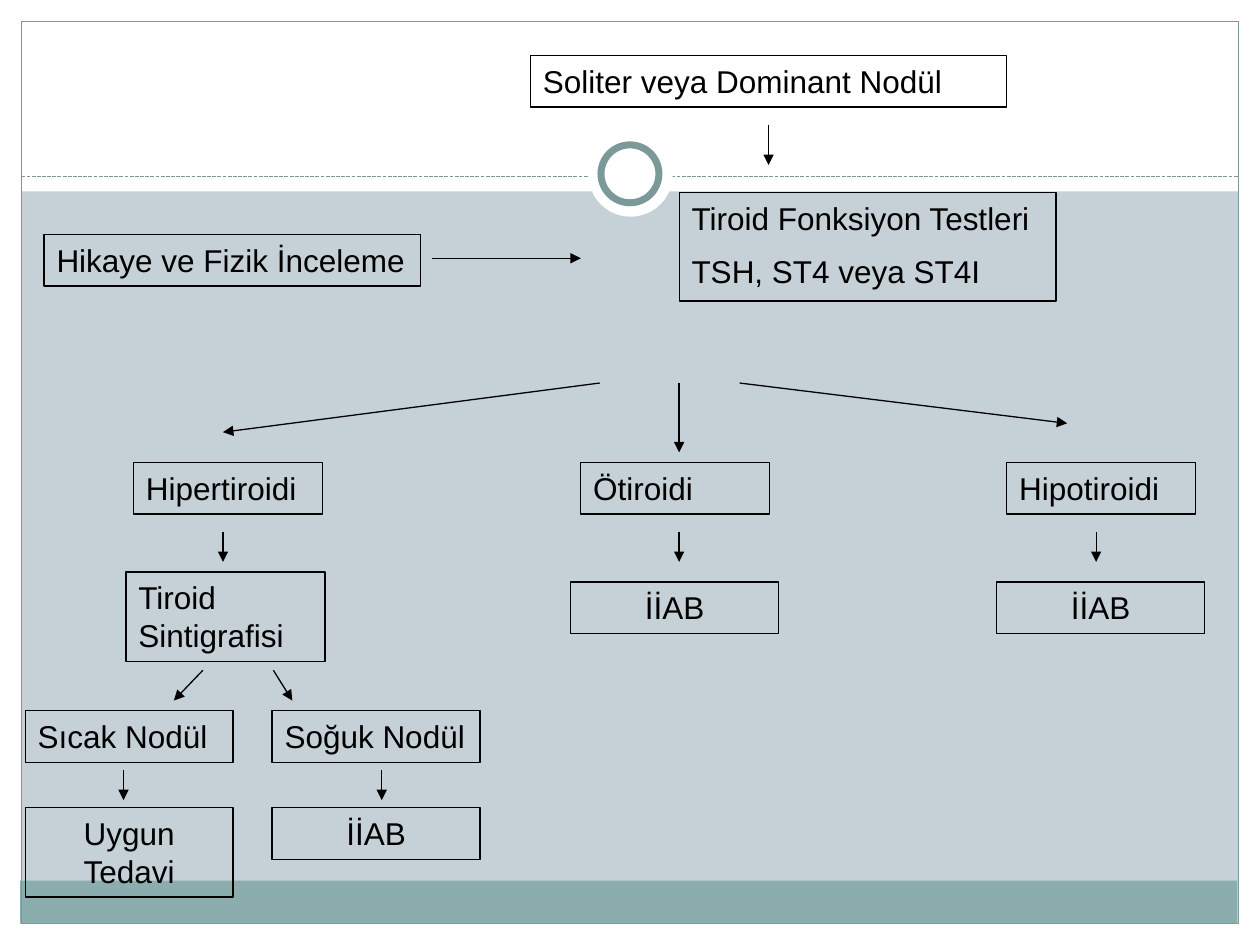
"""Build the thyroid nodule work-up flowchart slide."""
import dataclasses

import lxml.etree
import pptx
import pptx.dml.color
import pptx.enum.dml
import pptx.enum.shapes
import pptx.enum.text
import pptx.oxml.ns
import pptx.util

Inches = pptx.util.Inches
Pt = pptx.util.Pt
Shapes = pptx.enum.shapes.MSO_SHAPE
Align = pptx.enum.text.PP_ALIGN


@dataclasses.dataclass(frozen=True)
class Theme:
    """Colours, font and sizes of the slide."""
    background: str = "C5D1D7"
    paper: str = "FFFFFF"
    band: str = "8CADAE"
    frame: str = "7C999A"
    ink: str = "000000"
    font: str = "Arial"
    text_size: float = 18
    paragraph_gap: float = 9
    thin: float = 0.75
    ring: float = 4


def colour(value):
    """Return an RGB colour from its hex value."""
    return pptx.dml.color.RGBColor.from_string(value)


def write_text(text_frame, text, *, font, size, ink, gap, align):
    """Write one paragraph per line of text with the given format."""
    for index, line in enumerate(text.split("\n")):
        paragraph = text_frame.paragraphs[0] if index == 0 else text_frame.add_paragraph()
        paragraph.alignment = align
        paragraph.space_before = Pt(gap if index else 0)
        run = paragraph.add_run()
        run.text = line
        run.font.name = font
        run.font.size = Pt(size)
        run.font.color.rgb = colour(ink)


class FlowchartSlide:
    """Hold the theme and the slide, and add each kind of element."""

    def __init__(self, slide, theme):
        """Keep the slide and theme and paint the background."""
        self.slide = slide
        self.theme = theme
        slide.background.fill.solid()
        slide.background.fill.fore_color.rgb = colour(theme.background)

    def panel(self, left, top, width, height, *, kind=Shapes.RECTANGLE,
              fill=None, line=None, weight=None):
        """Add a decorative shape."""
        shape = self.slide.shapes.add_shape(
            kind, Inches(left), Inches(top), Inches(width), Inches(height))
        shape.shadow.inherit = False
        if fill:
            shape.fill.solid()
            shape.fill.fore_color.rgb = colour(fill)
        else:
            shape.fill.background()
        if line:
            shape.line.color.rgb = colour(line)
            shape.line.width = Pt(weight or self.theme.thin)
        else:
            shape.line.fill.background()
        return shape

    def box(self, text, left, top, width, height=0.41, align=Align.LEFT):
        """Add an outlined flowchart box."""
        theme = self.theme
        shape = self.panel(left, top, width, height, line=theme.ink)
        text_frame = shape.text_frame
        text_frame.word_wrap = True
        text_frame.auto_size = pptx.enum.text.MSO_AUTO_SIZE.SHAPE_TO_FIT_TEXT
        text_frame.vertical_anchor = pptx.enum.text.MSO_ANCHOR.TOP
        write_text(text_frame, text, font=theme.font, size=theme.text_size,
                   ink=theme.ink, gap=theme.paragraph_gap, align=align)

    def line(self, start, end, ink):
        """Add a thin straight line."""
        connector = self.slide.shapes.add_connector(
            pptx.enum.shapes.MSO_CONNECTOR.STRAIGHT,
            *(Inches(value) for value in (*start, *end)))
        connector.line.color.rgb = colour(ink)
        connector.line.width = Pt(self.theme.thin)
        lxml.etree.SubElement(
            connector.element.spPr, pptx.oxml.ns.qn("a:effectLst"))
        return connector

    def arrow(self, start, end):
        """Add a line with a triangular head at its end."""
        connector = self.line(start, end, self.theme.ink)
        lxml.etree.SubElement(connector.line._get_or_add_ln(),
                              pptx.oxml.ns.qn("a:tailEnd"), type="triangle")

    def frame(self):
        """Add the page margins, bands, border and ring."""
        theme = self.theme
        for margin in ((0, 7.33, 10, 0.17), (0, 0, 10, 1.52),
                       (0, 0, 0.17, 7.5), (9.83, 0, 0.17, 7.5)):
            self.panel(*margin, fill=theme.paper)
        self.panel(0.16, 6.99, 9.66, 0.34, fill=theme.band)
        self.panel(0.17, 0.17, 9.66, 7.16, line=theme.frame)
        divider = self.line((0.17, 1.4), (9.83, 1.4), theme.frame)
        divider.line.dash_style = pptx.enum.dml.MSO_LINE.SQUARE_DOT
        self.panel(4.67, 1.05, 0.67, 0.67, kind=Shapes.OVAL, fill=theme.paper)
        self.panel(4.77, 1.15, 0.46, 0.46, kind=Shapes.OVAL, fill=theme.paper,
                   line=theme.frame, weight=theme.ring)


def main():
    """Build and save the presentation."""
    presentation = pptx.Presentation()
    presentation.slide_width = Inches(10)
    presentation.slide_height = Inches(7.5)
    slide = presentation.slides.add_slide(presentation.slide_layouts[6])
    chart = FlowchartSlide(slide, Theme())
    chart.frame()

    chart.box("Soliter veya Dominant Nodül", 4.21, 0.44, 3.78)
    chart.box("Hikaye ve Fizik İnceleme", 0.35, 1.86, 2.99)
    chart.box("Tiroid Fonksiyon Testleri\nTSH, ST4 veya ST4I", 5.39, 1.53, 2.99, 0.86)
    chart.arrow((6.1, 0.99), (6.1, 1.31))
    chart.arrow((3.43, 2.05), (4.61, 2.05))

    diagnoses = (
        ("Hipertiroidi", 1.06, 1.77, (4.76, 3.04), (1.77, 3.43)),
        ("Ötiroidi", 4.61, 5.39, (5.39, 3.04), (5.39, 3.59)),
        ("Hipotiroidi", 7.99, 8.7, (5.87, 3.04), (8.47, 3.36)),
    )
    for name, left, arrow_x, start, end in diagnoses:
        chart.arrow(start, end)
        chart.box(name, left, 3.67, 1.5)
        chart.arrow((arrow_x, 4.22), (arrow_x, 4.46))

    chart.box("Tiroid Sintigrafisi", 1, 4.54, 1.58, 0.71)
    for left in (4.53, 7.91):
        chart.box("İİAB", left, 4.62, 1.65, align=Align.CENTER)

    nodules = (
        ("Sıcak Nodül", "Uygun Tedavi", 0.2, 0.71, 0.98, 1.61, 1.38),
        ("Soğuk Nodül", "İİAB", 2.16, 0.41, 3.03, 2.17, 2.32),
    )
    for name, action, left, height, arrow_x, start_x, end_x in nodules:
        chart.arrow((start_x, 5.32), (end_x, 5.56))
        chart.box(name, left, 5.64, 1.65)
        chart.arrow((arrow_x, 6.11), (arrow_x, 6.35))
        chart.box(action, left, 6.41, 1.65, height, Align.CENTER)

    presentation.save("out.pptx")


if __name__ == "__main__":
    main()
